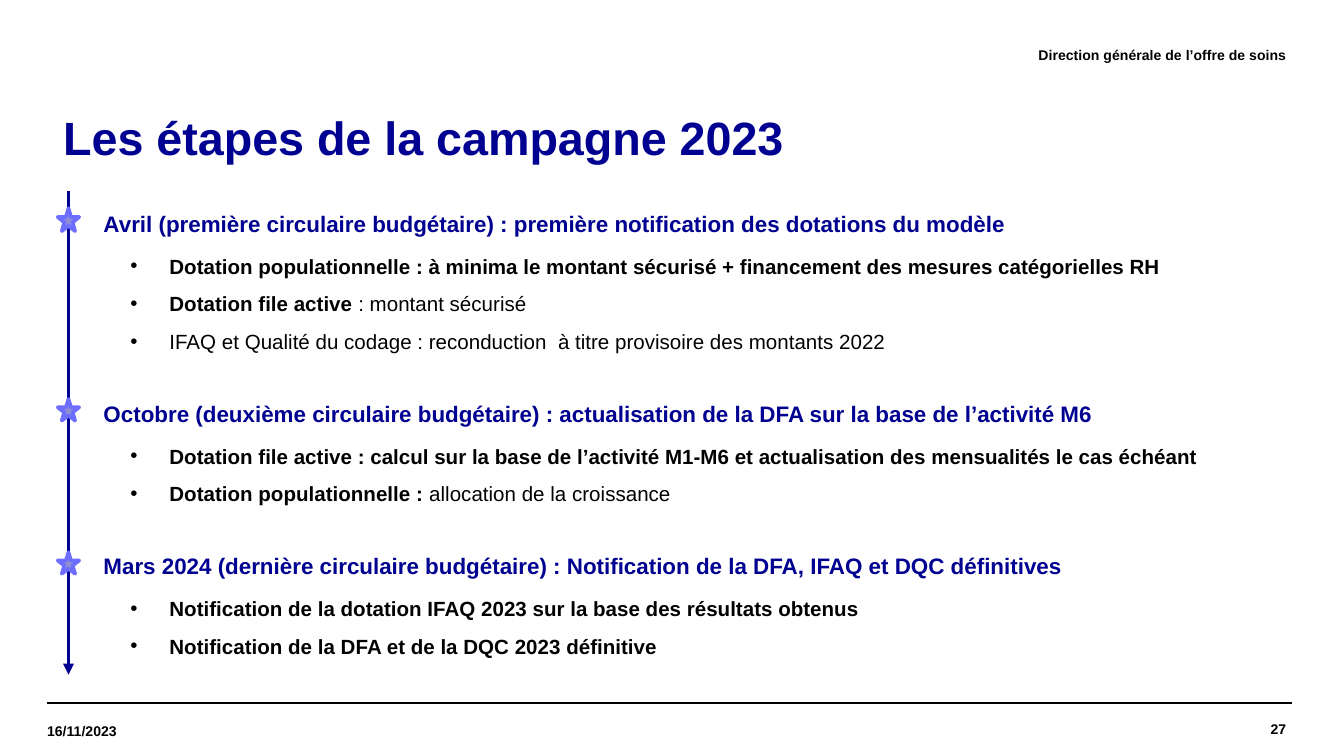
from lxml.etree import SubElement
from pptx import Presentation
from pptx.dml.color import RGBColor
from pptx.enum.shapes import MSO_CONNECTOR, MSO_SHAPE
from pptx.enum.text import MSO_ANCHOR, PP_ALIGN
from pptx.oxml.ns import qn
from pptx.util import Inches, Pt

NAVY = RGBColor(0x00, 0x00, 0x91)
BLACK = RGBColor(0x00, 0x00, 0x00)
STAR_FILL = RGBColor(0x8E, 0x8E, 0xD5)
STAR_LINE = RGBColor(0x6D, 0x6D, 0xFF)

# Each step: star top, star height, heading, bullets made of (text, bold) runs
STEPS = [
    (1.55, 0.17, "Avril (première circulaire budgétaire) : première notification des dotations du modèle", [
        [("Dotation populationnelle : à minima le montant sécurisé + financement des mesures catégorielles RH", True)],
        [("Dotation file active ", True), (": montant sécurisé", False)],
        [("IFAQ et Qualité du codage : reconduction  à titre provisoire des montants 2022", False)],
    ]),
    (2.97, 0.16, "Octobre (deuxième circulaire budgétaire) : actualisation de la DFA sur la base de l’activité M6", [
        [("Dotation file active : calcul sur la base de l’activité M1-M6 et actualisation des mensualités le cas échéant",
          True)],
        [("Dotation populationnelle : ", True), ("allocation de la croissance", False)],
    ]),
    (4.11, 0.16, "Mars 2024 (dernière circulaire budgétaire) : Notification de la DFA, IFAQ et DQC définitives", [
        [("Notification de la dotation IFAQ 2023 sur la base des résultats obtenus", True)],
        [("Notification de la DFA et de la DQC 2023 définitive", True)],
    ]),
]

presentation = Presentation()
presentation.slide_width = Inches(10)
presentation.slide_height = Inches(10) * 9 // 16
slide = presentation.slides.add_slide(presentation.slide_layouts[6])


def add_line(x1, y1, x2, y2, color, width):
    line = slide.shapes.add_connector(
        MSO_CONNECTOR.STRAIGHT, Inches(x1), Inches(y1), Inches(x2), Inches(y2))
    line.line.color.rgb = color
    line.line.width = Pt(width)
    SubElement(line._element.spPr, qn("a:effectLst"))
    return line


def add_run(paragraph, text, size, color, bold=True):
    run = paragraph.add_run()
    run.text = text
    run.font.name = "Arial"
    run.font.size = Pt(size)
    run.font.bold = bold
    run.font.color.rgb = color


# Footer rules
for left in (0.35, 0.39):
    add_line(left, 5.23, left + 9.22, 5.23, BLACK, 0.8)

# Title, header, date and page number
LABELS = [
    ("Les étapes de la campagne 2023", 0.35, 0.75, 9.21, 0.59, 25, NAVY, PP_ALIGN.LEFT, 0.12),
    ("Direction générale de l’offre de soins", 3.14, 0.21, 6.43, 0.39, 7.5, BLACK, PP_ALIGN.RIGHT, 0),
    ("16/11/2023", 0.35, 5.25, 1.32, 0.38, 7.5, BLACK, PP_ALIGN.LEFT, 0),
    ("27", 8.09, 5.23, 1.48, 0.39, 7.5, BLACK, PP_ALIGN.RIGHT, 0),
]
for text, left, top, width, height, size, color, alignment, inset in LABELS:
    label = slide.shapes.add_textbox(Inches(left), Inches(top), Inches(width), Inches(height))
    frame = label.text_frame
    frame.word_wrap = True
    frame.vertical_anchor = MSO_ANCHOR.MIDDLE
    frame.margin_left = Inches(inset)
    frame.margin_right = frame.margin_top = frame.margin_bottom = 0
    paragraph = frame.paragraphs[0]
    paragraph.alignment = alignment
    if color == NAVY:
        paragraph.line_spacing = 0.9
    add_run(paragraph, text, size, color)

# Steps of the campaign
body = slide.shapes.add_textbox(Inches(0.77), Inches(1.55), Inches(8.82), Inches(3.47))
frame = body.text_frame
frame.word_wrap = True
frame.margin_left = frame.margin_right = frame.margin_top = frame.margin_bottom = 0
for index, (star_top, star_height, heading, bullets) in enumerate(STEPS):
    paragraph = frame.add_paragraph() if index else frame.paragraphs[0]
    paragraph.alignment = PP_ALIGN.JUSTIFY
    paragraph.line_spacing = 1.07
    paragraph.space_before = Pt(18 if index else 0)
    paragraph.space_after = Pt(8)
    add_run(paragraph, heading, 12, NAVY)
    for runs in bullets:
        paragraph = frame.add_paragraph()
        paragraph.level = 1
        properties = paragraph._p.get_or_add_pPr()
        properties.set("marL", str(Inches(0.49)))
        properties.set("indent", str(Inches(-0.29)))
        SubElement(properties, qn("a:buFont"), typeface="Arial")
        SubElement(properties, qn("a:buChar"), char="•")
        paragraph.alignment = PP_ALIGN.JUSTIFY
        paragraph.line_spacing = 1.07
        paragraph.space_before = Pt(0)
        paragraph.space_after = Pt(6)
        for text, bold in runs:
            add_run(paragraph, text, 11, BLACK, bold)

# Timeline arrow with one star per step
timeline = add_line(0.51, 1.42, 0.51, 5.02, NAVY, 1.5)
SubElement(timeline.line._get_or_add_ln(), qn("a:tailEnd"), type="triangle")
for star_top, star_height, heading, bullets in STEPS:
    star = slide.shapes.add_shape(
        MSO_SHAPE.STAR_5_POINT, Inches(0.43), Inches(star_top), Inches(0.16), Inches(star_height))
    star.shadow.inherit = False
    star.fill.solid()
    star.fill.fore_color.rgb = STAR_FILL
    star.line.color.rgb = STAR_LINE
    star.line.width = Pt(2)

presentation.save("out.pptx")
